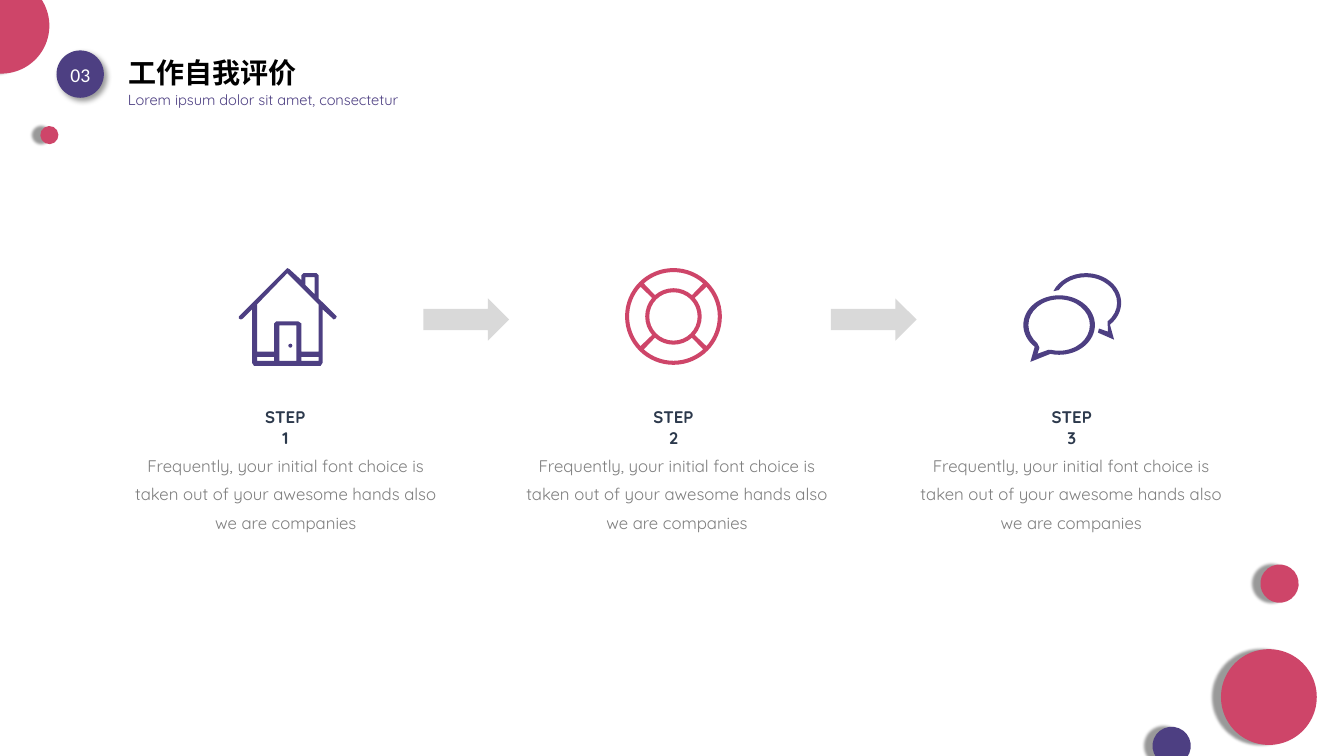
from math import cos, radians, sin, tan

from lxml import etree
from pptx import Presentation
from pptx.dml.color import RGBColor
from pptx.enum.shapes import MSO_SHAPE
from pptx.enum.text import MSO_ANCHOR, MSO_AUTO_SIZE, PP_ALIGN
from pptx.oxml.ns import qn
from pptx.util import Pt

PX = 9144  # EMU per px, 100 px to the inch
OVAL, ARROW = MSO_SHAPE.OVAL, MSO_SHAPE.RIGHT_ARROW
LEFT, CENTER = PP_ALIGN.LEFT, PP_ALIGN.CENTER
TOP, MIDDLE = MSO_ANCHOR.TOP, MSO_ANCHOR.MIDDLE
ROSE = RGBColor(0xCE, 0x45, 0x69)
PLUM = RGBColor(0x4D, 0x3F, 0x82)
NAVY = RGBColor(0x2C, 0x39, 0x4C)
GRAY = RGBColor(0x7F, 0x7F, 0x7F)
PALE = RGBColor(0xD9, 0xD9, 0xD9)
BLACK = RGBColor(0, 0, 0)
WHITE = RGBColor(0xFF, 0xFF, 0xFF)
SANS, ROUND = "Calibri", "Quicksand"
BLURB = ("Frequently, your initial font choice is taken out of your "
         "awesome hands also we are companies")


def put_text(slide, box, text, size, color, font=ROUND, bold=False, align=LEFT,
             anchor=TOP, wrap=True, inset=(10, 5), lead=None, before=0, holder=None):
    """Write one formatted paragraph in a text box, or in the holder given."""
    place = [v * PX for v in box]
    shape = holder or slide.shapes.add_textbox(*place)
    shape.left, shape.top, shape.width, shape.height = place
    frame = shape.text_frame
    frame.auto_size = MSO_AUTO_SIZE.NONE
    frame.word_wrap, frame.vertical_anchor = wrap, anchor
    frame.margin_left = frame.margin_right = inset[0] * PX
    frame.margin_top = frame.margin_bottom = inset[1] * PX
    para = frame.paragraphs[0]
    para.alignment, para.space_before = align, Pt(before)
    if lead:
        para.line_spacing = Pt(lead)
    run = para.add_run()
    run.text = text
    run.font.name, run.font.size, run.font.bold = font, Pt(size), bold
    run.font.color.rgb = color


def paint(shape, color):
    shape.shadow.inherit = False
    shape.fill.solid()
    shape.fill.fore_color.rgb = color
    shape.line.fill.background()


def add_dot(slide, x, y, size, color, turn=0, blur=2, dist=6, angle=180):
    """Add a circle that casts a soft shadow."""
    dot = slide.shapes.add_shape(OVAL, x * PX, y * PX, size * PX, size * PX)
    paint(dot, color)
    dot.rotation = turn
    effects = dot._element.spPr.find(qn("a:effectLst"))
    cast = etree.SubElement(effects, qn("a:outerShdw"), blurRad=str(Pt(blur)),
                            dist=str(Pt(dist)), dir=str(angle * 60000),
                            algn="ctr", rotWithShape="0")
    tint = etree.SubElement(cast, qn("a:srgbClr"), val=str(BLACK))
    etree.SubElement(tint, qn("a:alpha"), val="40000")


def arc(cx, cy, rx, ry, start=0, end=360):
    """Return a point, then curves of three points each, along an ellipse."""
    def spot(t, pull=0):
        return cx + rx * (cos(t) - pull * sin(t)), cy + ry * (sin(t) + pull * cos(t))

    low, high = sorted((start, end))
    cuts = [low, *range(low // 90 * 90 + 90, high, 90), high]
    if start > end:
        cuts.reverse()
    turns = [radians(cut) for cut in cuts]
    items = [spot(turns[0])]
    for a, b in zip(turns, turns[1:]):
        pull = 4 / 3 * tan((b - a) / 4)
        items.append(spot(a, pull) + spot(b, -pull) + spot(b))
    return items


def rect(x, y, w, h):
    return [(x, y), (x + w, y), (x + w, y + h), (x, y + h)]


def house():
    wall = [(96, 47), (79, 30), (79, 7), (77, 5), (64, 5), (62, 7), (62, 12),
            (50, 1), (48, 0), (47, 1), (1, 47), (0, 48), (0, 50), (2, 51),
            (4, 50), (13, 41), (13, 94), (15, 97), (81, 97), (83, 94), (83, 41),
            (93, 50), (94, 51), (96, 50), (97, 48)]
    room = [(79, 83), (62, 83), (62, 55), (59, 53), (37, 53), (35, 55),
            (35, 83), (18, 83), (18, 36), (48, 5), (79, 36)]
    flue = [(66, 9), (75, 9), (75, 26), (66, 17)]
    return [wall, room, flue, rect(62, 88, 17, 4), rect(18, 88, 17, 4),
            rect(40, 57, 17, 35), arc(51, 77, 2, 2)]


def buoy():
    bands = [arc(48, 48, 44, 44, mid - 42, mid + 42)
             + chain(arc(48, 48, 28, 28, mid + 41, mid - 41))
             for mid in range(0, 360, 90)]
    return [arc(48, 48, 48, 48), arc(48, 48, 24, 24), *bands]


def chain(items):
    """Return items as they are, to follow on from an earlier arc."""
    return list(items)


def chat():
    rim = arc(35.5, 51.5, 35.5, 29.5, 133, 464) + [(7, 88)]
    core = arc(35.5, 51.5, 30.5, 25.5, 135, 464) + [(25, 76), (14, 80), (16, 74)]
    back = (arc(62, 29.5, 35, 29.5, 203, 407) + [(90, 66), (74, 59), (75, 55), (84, 58)]
            + arc(62, 29.5, 31, 25.5, 406, 210))
    return [rim, core, back]


def add_icon(slide, x, y, loops, color):
    """Draw closed loops as one outline, inner loops cutting holes."""
    pen = None
    for loop in loops:
        flat = [(item[i] * PX, item[i + 1] * PX)
                for item in loop for i in range(0, len(item), 2)]
        if pen:
            pen.move_to(*flat[0])
        else:
            pen = slide.shapes.build_freeform(*flat[0], scale=1.0)
        pen.add_line_segments(flat[1:], close=True)
    shape = pen.convert_to_shape(x * PX, y * PX)
    paint(shape, color)
    steps = iter(list(shape._element.iter(qn("a:lnTo"))))
    for item in (item for loop in loops for item in loop[1:]):
        step = next(steps)
        if len(item) == 6:
            step.tag = qn("a:cubicBezTo")
            for extra in (next(steps), next(steps)):
                step.append(extra[0])
                extra.getparent().remove(extra)


def add_head(slide, x, y):
    put_text(slide, (x, y, 188, 44), "工作自我评价", 20, BLACK, font=SANS, bold=True,
             wrap=False, holder=slide.shapes.title)
    put_text(slide, (x, y + 35, 371, 29), "Lorem ipsum dolor sit amet, consectetur",
             10.5, PLUM)
    add_dot(slide, x - 61, y, 47, PLUM, 157.2, blur=4, dist=3, angle=45)
    put_text(slide, (x - 57, y + 8, 61, 34), "03", 14, WHITE, font=SANS)


def add_dots(slide):
    add_dot(slide, 1211, 644, 95, ROSE)
    add_dot(slide, 1250, 560, 38, ROSE, 157.2)
    add_dot(slide, 1143, 721, 38, PLUM, 157.2)
    add_dot(slide, -46, -22, 95, ROSE, 237)
    add_dot(slide, 40, 125, 18, ROSE, 237)


def add_step(slide, x, y, name, tag, icon, loops, color):
    """Place blurb, name and icon; tag is dx and icon (dx, dy) from the corner."""
    put_text(slide, (x, y + 172, 333, 96), BLURB, 12, GRAY, align=CENTER,
             inset=(12, 6), lead=20.2, before=2)
    put_text(slide, (x + tag, y + 143, 68, 30), name, 12, NAVY, bold=True,
             align=CENTER, anchor=MIDDLE)
    add_icon(slide, x + icon[0], y + icon[1], loops, color)


def add_steps(slide, y):
    steps = [(117, 132, (120, 0), house(), PLUM),
             (505, 129, (115, 0), buoy(), ROSE),
             (896, 133, (119, 5), chat(), PLUM)]
    for i, (x, tag, icon, loops, color) in enumerate(steps, 1):
        add_step(slide, x, y, f"STEP {i}", tag, icon, loops, color)
    for x in (420, 824):
        arrow = slide.shapes.add_shape(ARROW, x * PX, (y + 30) * PX, 85 * PX, 42 * PX)
        paint(arrow, PALE)


def main():
    deck = Presentation()
    deck.slide_width, deck.slide_height = 1333 * PX, 750 * PX
    slide = deck.slides.add_slide(deck.slide_layouts[5])
    add_dots(slide)
    add_head(slide, 117, 50)
    add_steps(slide, 266)
    deck.save("out.pptx")


if __name__ == "__main__":
    main()
